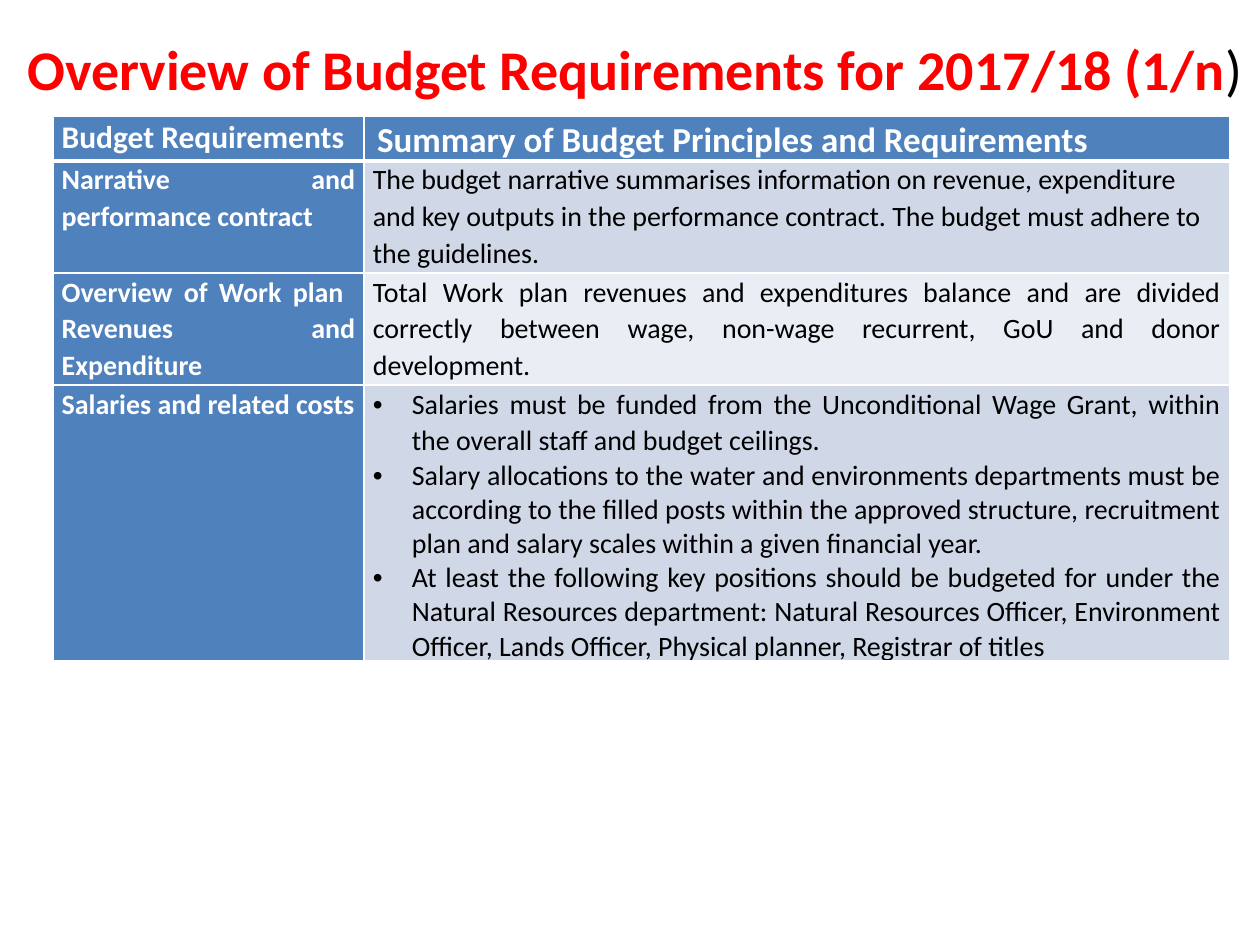
from lxml.etree import SubElement
from pptx import Presentation
from pptx.dml.color import RGBColor
from pptx.enum.text import MSO_ANCHOR, PP_ALIGN
from pptx.oxml.ns import qn
from pptx.util import Inches, Pt

COLORS = {"red": "FF0000", "black": "000000", "white": "FFFFFF",
          "blue": "4F81BD", "band": "D0D8E8", "pale": "E9EDF4"}
FONT = "Calibri"
W, H = 10, 7.5
COLS = [2.47, 6.87]
ROWS = [0.34, 0.89, 0.89, 2.19]
LEFT, JUST = PP_ALIGN.LEFT, PP_ALIGN.JUSTIFY
HEADER = ["Budget Requirements", "Summary of Budget Principles and Requirements"]
BODY = [
    ("Narrative and performance contract", LEFT, "band", [
        "The budget narrative summarises information on revenue, expenditure and key outputs "
        "in the performance contract. The budget must adhere to the guidelines."]),
    ("Overview of Work plan  Revenues and Expenditure", JUST, "pale", [
        "Total Work plan revenues and expenditures balance and are divided correctly between "
        "wage, non-wage recurrent, GoU and donor development."]),
    ("Salaries and related costs", JUST, "band", [
        "Salaries must be funded from the Unconditional Wage Grant, within the overall staff "
        "and budget ceilings. ",
        "Salary allocations to the water and environments departments must be according to the "
        "filled posts within the approved structure, recruitment plan and salary scales within "
        "a given financial year.",
        "At least the following key positions should be budgeted for under the Natural Resources "
        "department: Natural Resources Officer, Environment Officer, Lands Officer, Physical "
        "planner, Registrar of titles"]),
]


def rgb(name):
    return RGBColor.from_string(COLORS[name])


def style(r, size, color, bold=False):
    r.font.name, r.font.size, r.font.bold = FONT, Pt(size), bold
    r.font.color.rgb = rgb(color)


def add_run(p, text, size, color, bold=False):
    r = p.add_run()
    r.text = text
    style(r, size, color, bold)


def add_title(s):
    tf = s.shapes.add_textbox(Inches(0.08), Inches(0.08), Inches(W - 0.08), Inches(0.92)).text_frame
    tf.word_wrap = True
    tf.vertical_anchor = MSO_ANCHOR.MIDDLE
    p = tf.paragraphs[0]
    p.alignment = PP_ALIGN.CENTER
    add_run(p, "Overview of Budget Requirements for 2017/18 (1/n", 32, "red", True)
    add_run(p, ")", 32, "black")


def set_borders(cell, bottom):
    tcPr = cell._tc.get_or_add_tcPr()
    for tag, width in (("lnL", 1), ("lnR", 1), ("lnT", 1), ("lnB", bottom)):
        ln = SubElement(tcPr, qn("a:" + tag), w=str(Pt(width)))
        fill = SubElement(ln, qn("a:solidFill"))
        SubElement(fill, qn("a:srgbClr"), val=COLORS["white"])


def set_bullet(p):
    pPr = p._p.get_or_add_pPr()
    pPr.set("marL", str(Inches(0.31)))
    pPr.set("indent", str(-Inches(0.31)))
    SubElement(pPr, qn("a:buFont"), typeface="Arial")
    SubElement(pPr, qn("a:buChar"), char="•")


def fill_cell(cell, texts, fill, color, size=16, bold=False, align=LEFT, bottom=1):
    cell.margin_left = cell.margin_right = Inches(0.07)
    cell.margin_top = cell.margin_bottom = 0
    set_borders(cell, bottom)
    cell.fill.solid()
    cell.fill.fore_color.rgb = rgb(fill)
    tf = cell.text_frame
    tf.text = "\n".join(texts)
    for i, p in enumerate(tf.paragraphs):
        p.alignment = align
        if i == 0:
            p.line_spacing = 1.07
        if len(texts) > 1:
            set_bullet(p)
        for r in p.runs:
            style(r, size, color, bold)


def add_requirements(s):
    tbl = s.shapes.add_table(len(ROWS), len(COLS), Inches(0.42), Inches(0.92),
                             Inches(sum(COLS)), Inches(sum(ROWS))).table
    for col, width in zip(tbl.columns, COLS):
        col.width = Inches(width)
    for row, height in zip(tbl.rows, ROWS):
        row.height = Inches(height)
    for c, (text, size) in enumerate(zip(HEADER, (18, 10.5))):
        lead = text if c == 0 else " "
        fill_cell(tbl.cell(0, c), [lead], "blue", "white", size, True, bottom=3)
    add_run(tbl.cell(0, 1).text_frame.paragraphs[0], HEADER[1], 20, "white", True)
    for i, (name, align, fill, texts) in enumerate(BODY, 1):
        fill_cell(tbl.cell(i, 0), [name], "blue", "white", bold=True, align=JUST)
        fill_cell(tbl.cell(i, 1), texts, fill, "black", align=align)


def main():
    prs = Presentation()
    prs.slide_width, prs.slide_height = Inches(W), Inches(H)
    s = prs.slides.add_slide(prs.slide_layouts[6])
    add_title(s)
    add_requirements(s)
    prs.save("out.pptx")


if __name__ == "__main__":
    main()
